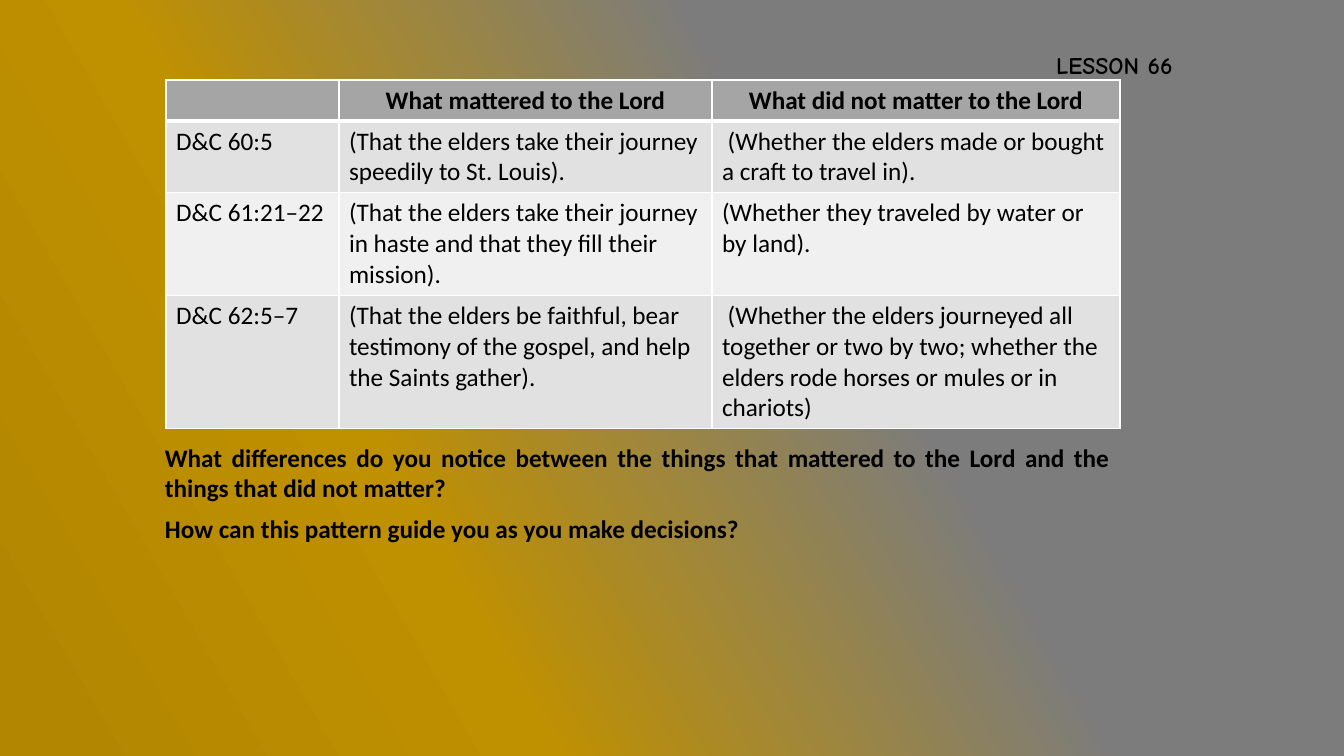
from dataclasses import dataclass

import pptx
import pptx.dml.color
import pptx.enum.text
import pptx.oxml
import pptx.oxml.ns
import pptx.util

EMU_PER_PX = 914400 / 100.8
ALIGN = pptx.enum.text.PP_ALIGN


@dataclass(frozen=True)
class Theme:
    text: str = "000000"
    border: str = "FFFFFF"
    header: str = "A5A5A5"
    bands: tuple = ("E1E1E1", "F0F0F0")
    gradient: tuple = ((37, "7C7C7C"), (69, "BF9000"), (97, "B28600"))
    gradient_angle: int = 150
    body_font: str = "Calibri"
    title_font: str = "Comic Neue"
    body_size: int = 18
    title_size: int = 17
    border_width: int = 1
    header_rule: int = 3


@dataclass(frozen=True)
class Box:
    left: int
    top: int
    width: int
    height: int

    def emu(self) -> tuple:
        return tuple(px(n) for n in (self.left, self.top, self.width, self.height))


@dataclass(frozen=True)
class Question:
    text: str
    box: Box
    wrap: bool


THEME = Theme()
TITLE_BOX = Box(1046, 46, 172, 51)
TABLE_LEFT, TABLE_TOP = 166, 80
COLUMN_WIDTHS = (173, 373, 408)
ROW_HEIGHTS = (41, 71, 103, 133)
ROWS = (
    ("", "What mattered to the Lord", "What did not matter to the Lord"),
    ("D&C 60:5",
     "(That the elders take their journey speedily to St. Louis).",
     " (Whether the elders made or bought a craft to travel in)."),
    ("D&C 61:21–22",
     "(That the elders take their journey in haste and that they fill their mission).",
     "(Whether they traveled by water or by land)."),
    ("D&C 62:5–7",
     "(That the elders be faithful, bear testimony of the gospel, and help the Saints gather).",
     " (Whether the elders journeyed all together or two by two; whether the elders "
     "rode horses or mules or in chariots)"),
)
QUESTIONS = (
    Question("What differences do you notice between the things that mattered to the Lord "
             "and the things that did not matter?", Box(155, 437, 965, 72), True),
    Question("How can this pattern guide you as you make decisions?",
             Box(155, 508, 600, 40), False),
)


def px(length: int) -> pptx.util.Emu:
    return pptx.util.Emu(round(length * EMU_PER_PX))


def rgb(color: str) -> pptx.dml.color.RGBColor:
    return pptx.dml.color.RGBColor.from_string(color)


def write(text_frame, text: str, align, bold: bool = True,
          name: str = THEME.body_font, size: int = THEME.body_size) -> None:
    text_frame.text = text
    paragraph = text_frame.paragraphs[0]
    paragraph.alignment = align
    font = paragraph.font
    font.name, font.size, font.bold = name, pptx.util.Pt(size), bold
    font.color.rgb = rgb(THEME.text)


def paint_background(slide) -> None:
    """Replace the two default gradient stops with the theme's three."""
    fill = slide.background.fill
    fill.gradient()
    stops = "".join(f'<a:gs pos="{position * 1000}"><a:srgbClr val="{color}"/></a:gs>'
                    for position, color in THEME.gradient)
    gradient = pptx.oxml.parse_xml(
        f'<a:gradFill {pptx.oxml.ns.nsdecls("a")} rotWithShape="1"><a:gsLst>{stops}</a:gsLst>'
        f'<a:lin ang="{THEME.gradient_angle * 60000}" scaled="0"/></a:gradFill>')
    default = slide.background._cSld.find(".//" + pptx.oxml.ns.qn("a:gradFill"))
    default.getparent().replace(default, gradient)


def add_borders(cell, top: int, bottom: int) -> None:
    properties = cell._tc.get_or_add_tcPr()
    side = THEME.border_width
    for edge, width in (("L", side), ("R", side), ("T", top), ("B", bottom)):
        properties.append(pptx.oxml.parse_xml(
            f'<a:ln{edge} {pptx.oxml.ns.nsdecls("a")} w="{pptx.util.Pt(width)}">'
            f'<a:solidFill><a:srgbClr val="{THEME.border}"/></a:solidFill></a:ln{edge}>'))


def add_title(slide) -> None:
    title = slide.shapes.title
    title.left, title.top, title.width, title.height = TITLE_BOX.emu()
    title.text_frame.vertical_anchor = pptx.enum.text.MSO_ANCHOR.TOP
    write(title.text_frame, "LESSON 66", ALIGN.LEFT,
          name=THEME.title_font, size=THEME.title_size)


def add_comparison(slide) -> None:
    box = Box(TABLE_LEFT, TABLE_TOP, sum(COLUMN_WIDTHS), sum(ROW_HEIGHTS))
    table = slide.shapes.add_table(len(ROWS), len(COLUMN_WIDTHS), *box.emu()).table
    for column, width in zip(table.columns, COLUMN_WIDTHS):
        column.width = px(width)
    for index, (row, height, texts) in enumerate(zip(table.rows, ROW_HEIGHTS, ROWS)):
        row.height = px(height)
        header = index == 0
        color = THEME.header if header else THEME.bands[(index - 1) % 2]
        top = THEME.header_rule if index == 1 else THEME.border_width
        bottom = THEME.header_rule if header else THEME.border_width
        for cell, text in zip(row.cells, texts):
            add_borders(cell, top, bottom)
            cell.fill.solid()
            cell.fill.fore_color.rgb = rgb(color)
            write(cell.text_frame, text, ALIGN.CENTER if header else ALIGN.LEFT, header)


def add_question(slide, question: Question) -> None:
    text_frame = slide.shapes.add_textbox(*question.box.emu()).text_frame
    text_frame.word_wrap = question.wrap
    write(text_frame, question.text, ALIGN.JUSTIFY)


def main() -> None:
    presentation = pptx.Presentation()
    presentation.slide_width, presentation.slide_height = px(1344), px(756)
    title_only = presentation.slide_layouts.get_by_name("Title Only")
    slide = presentation.slides.add_slide(title_only)
    paint_background(slide)
    add_title(slide)
    add_comparison(slide)
    for question in QUESTIONS:
        add_question(slide, question)
    presentation.save("out.pptx")


if __name__ == "__main__":
    main()
